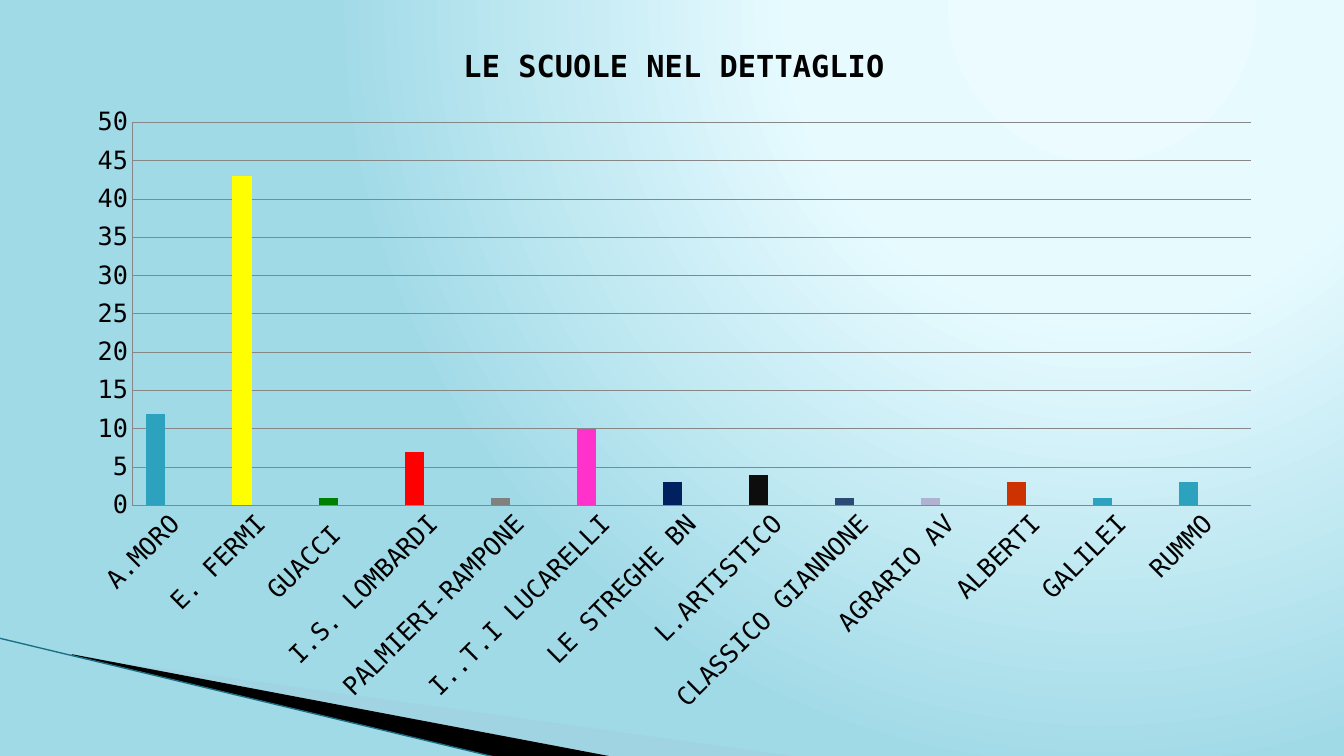
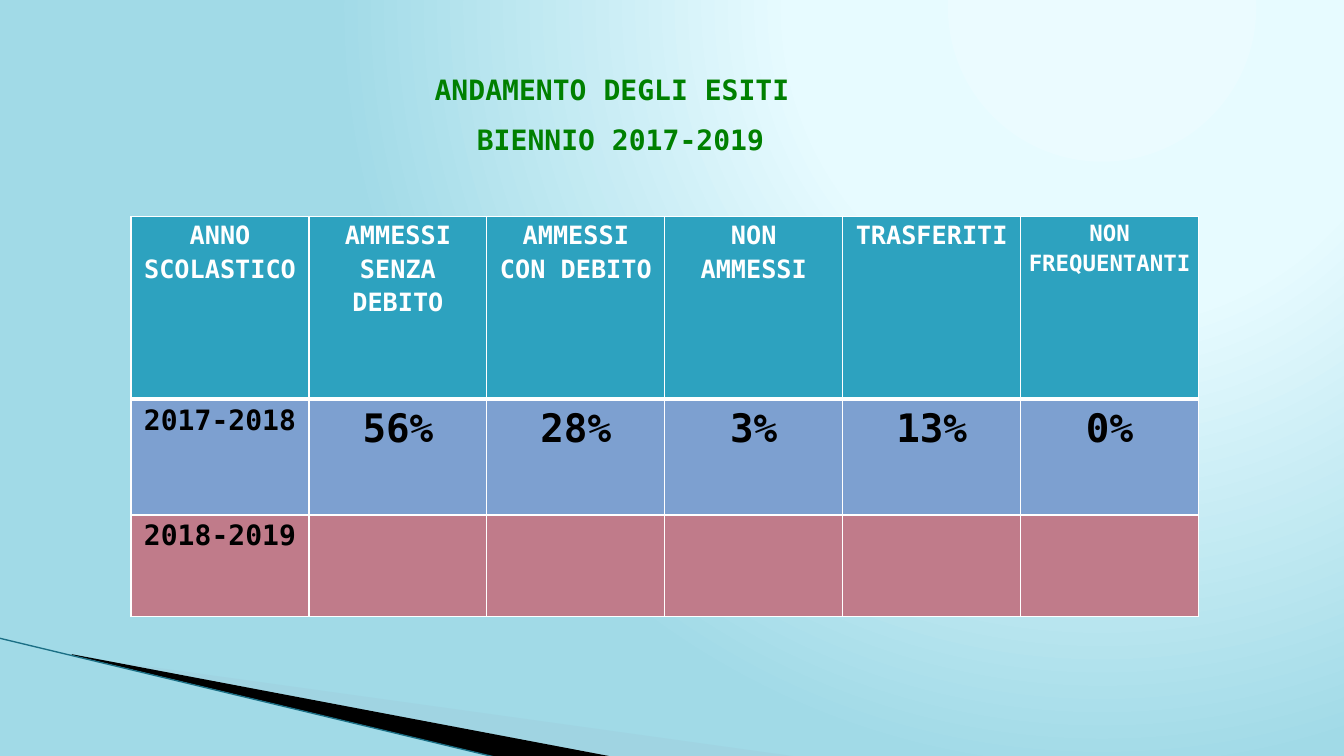
from dataclasses import dataclass

from lxml import etree
from pptx import Presentation
from pptx.chart.data import CategoryChartData
from pptx.dml.color import RGBColor
from pptx.enum.chart import XL_CHART_TYPE, XL_TICK_MARK
from pptx.enum.shapes import MSO_CONNECTOR
from pptx.enum.text import MSO_ANCHOR, PP_ALIGN
from pptx.oxml import parse_xml
from pptx.oxml.ns import nsdecls, qn
from pptx.util import Inches, Pt

CLUSTERED = XL_CHART_TYPE.COLUMN_CLUSTERED
NO_TICK = XL_TICK_MARK.NONE
STRAIGHT = MSO_CONNECTOR.STRAIGHT
CENTER = PP_ALIGN.CENTER
TOP = MSO_ANCHOR.TOP


@dataclass(frozen=True)
class Theme:
    """Colours, font and type sizes shared by the slides."""
    font: str = "DejaVu Sans Mono"
    glow: tuple = ((0, "EBFBFF"), (40, "E7FBFF"), (100, "A1DAE7"))
    black: str = "000000"
    white: str = "FFFFFF"
    green: str = "008000"
    teal: str = "2DA2BF"
    red: str = "DA1F28"
    orange: str = "EB641B"
    blue_row: str = "7DA0D0"
    rose_row: str = "C07B8A"
    pale_wedge: str = "A0CBDC"
    edge: str = "1B6F85"
    grid: str = "878787"
    small: float = 16
    body: float = 18
    heading: float = 20
    chart_title: float = 21.6
    figure: float = 28


THEME = Theme()


@dataclass(frozen=True)
class Box:
    """A region whose inner places are given in percent of its size."""
    left: int
    top: int
    width: int
    height: int

    def point(self, x, y):
        """Return the position at x and y percent."""
        return (round(self.left + self.width * x / 100),
                round(self.top + self.height * y / 100))

    def region(self, x, y, width, height):
        """Return the inner region at the given percentages."""
        return Box(*self.point(x, y), round(self.width * width / 100),
                   round(self.height * height / 100))

    def bounds(self):
        """Return left, top, width and height."""
        return self.left, self.top, self.width, self.height


SCHOOLS = (
    ("A.MORO", 12, None), ("E. FERMI", 43, "FFFF00"), ("GUACCI ", 1, "008000"),
    ("I.S. LOMBARDI", 7, "FF0000"), ("PALMIERI-RAMPONE", 1, "808080"),
    ("I..T.I LUCARELLI", 10, "FF33CC"), ("LE STREGHE BN", 3, "002060"),
    ("L.ARTISTICO", 4, "0D0D0D"), ("CLASSICO GIANNONE", 1, "2B4A76"),
    ("AGRARIO AV", 1, "AFB2D0"), ("ALBERTI", 3, "CC3300"),
    ("GALILEI", 1, None), ("RUMMO", 3, None),
)
RESULTS = (
    ("ANNO SCOLASTICO", "AMMESSI SENZA DEBITO", "AMMESSI CON DEBITO",
     "NON AMMESSI", "TRASFERITI", "NON FREQUENTANTI"),
    ("2017-2018", "56%", "28%", "3%", "13%", "0%"),
    ("2018-2019", "", "", "", "", ""),
)
ROW_SHARES = (45.6, 28.96, 25.44)
WEDGES = (
    (((5.48, 86.8), (59.48, 100.13), (45.6, 100.13), (5.48, 86.67)), THEME.pale_wedge, 40),
    (((5.33, 86.53), (45.68, 100.13), (37.2, 100.27), (5.4, 86.67)), THEME.black, 100),
)
EDGE = ((-0.08, 84.4), (37.13, 100.27))


def rgb(code):
    """Turn a hex code into a colour."""
    return RGBColor.from_string(code)


def paint(fill, code):
    """Give a solid fill its colour."""
    fill.solid()
    fill.fore_color.rgb = rgb(code)


def style_font(font, size, code, bold=False):
    """Apply the theme font with a size and colour."""
    font.name = THEME.font
    font.size = Pt(size)
    font.bold = bold
    font.color.rgb = rgb(code)


def set_background(master):
    """Give the master its radial glow."""
    master.background.fill.solid()
    solid = master.element.find(f".//{qn('p:bgPr')}/{qn('a:solidFill')}")
    stops = "".join(f'<a:gs pos="{share * 1000}"><a:srgbClr val="{code}"/></a:gs>'
                    for share, code in THEME.glow)
    glow = parse_xml(
        f'<a:gradFill {nsdecls("a")} rotWithShape="1"><a:gsLst>{stops}</a:gsLst>'
        '<a:path path="circle"><a:fillToRect l="65000" t="0" r="0" b="98000"/>'
        '</a:path></a:gradFill>')
    solid.getparent().replace(solid, glow)


def add_corner(slide, page):
    """Draw the wedges and edge in the lower left corner."""
    for corners, code, opacity in WEDGES:
        start, *others = (page.point(*corner) for corner in corners)
        outline = slide.shapes.build_freeform(*start)
        outline.add_line_segments(others)
        wedge = outline.convert_to_shape()
        wedge.shadow.inherit = False
        wedge.line.fill.background()
        paint(wedge.fill, code)
        if opacity < 100:
            tint = wedge.element.spPr.find(f"{qn('a:solidFill')}/{qn('a:srgbClr')}")
            etree.SubElement(tint, qn("a:alpha"), val=str(opacity * 1000))
    start, end = (page.point(*tip) for tip in EDGE)
    edge = slide.shapes.add_connector(STRAIGHT, *start, *end)
    edge.line.color.rgb = rgb(THEME.edge)
    edge.line.width = Pt(0.95)
    etree.SubElement(edge.element.spPr, qn("a:effectLst"))


def add_school_chart(slide, box):
    """Chart the schools, each with its own colour."""
    names, counts, colours = zip(*SCHOOLS)
    data = CategoryChartData()
    data.categories = names
    empty = (None,) * len(names)
    for number, values in enumerate((counts, empty, empty), 1):
        data.add_series(f"Series {number}", values)
    chart = slide.shapes.add_chart(CLUSTERED, *box.bounds(), data).chart
    style_font(chart.font, THEME.body, THEME.black)
    chart.has_legend = False
    chart.has_title = True
    heading = chart.chart_title.text_frame.paragraphs[0]
    heading.text = "LE SCUOLE NEL DETTAGLIO"
    style_font(heading.font, THEME.chart_title, THEME.black, True)
    chart.chart_title.include_in_layout = False

    bars = chart.plots[0]
    bars.gap_width = 150
    bars.overlap = 0
    bars.vary_by_categories = False
    for series, code in zip(bars.series, (THEME.teal, THEME.red, THEME.orange)):
        paint(series.format.fill, code)
        series.invert_if_negative = False
    for index, code in enumerate(colours):
        if code:
            paint(bars.series[0].points[index].format.fill, code)

    schools, scale = chart.category_axis, chart.value_axis
    scale.minimum_scale, scale.maximum_scale, scale.major_unit = 0, 50, 5
    scale.has_major_gridlines = True
    for axis in (schools, scale):
        axis.major_tick_mark = axis.minor_tick_mark = NO_TICK
        style_font(axis.tick_labels.font, THEME.body, THEME.black)
    for rule in (schools, scale, scale.major_gridlines):
        rule.format.line.color.rgb = rgb(THEME.grid)
        rule.format.line.width = Pt(0.75)
    schools._element.find(f"{qn('c:txPr')}/{qn('a:bodyPr')}").set("rot", "-2700000")


def add_heading(slide, box):
    """Write the two heading lines."""
    frame = slide.shapes.add_textbox(*box.bounds()).text_frame
    frame.word_wrap = True
    frame.text = "ANDAMENTO DEGLI ESITI \nBIENNIO 2017-2019"
    for line in frame.paragraphs:
        line.alignment = CENTER
        line.line_spacing = 1.5
        style_font(line.font, THEME.heading, THEME.green, True)


def set_borders(cell, top, bottom):
    """Draw white cell borders with the given top and bottom widths."""
    widths = (("lnL", 1), ("lnR", 1), ("lnT", top), ("lnB", bottom))
    for place, (side, width) in enumerate(widths):
        border = parse_xml(
            f'<a:{side} {nsdecls("a")} w="{Pt(width)}"><a:solidFill>'
            f'<a:srgbClr val="{THEME.white}"/></a:solidFill></a:{side}>')
        cell._tc.get_or_add_tcPr().insert(place, border)


def text_size(row, column):
    """Choose the type size of a table cell."""
    if row == 0:
        return THEME.small if column == 5 else THEME.body
    return THEME.heading if column == 0 else THEME.figure


def add_results(slide, box):
    """Fill the table of results by school year."""
    rows, columns = len(RESULTS), len(RESULTS[0])
    table = slide.shapes.add_table(rows, columns, *box.bounds()).table
    table.first_row = table.horz_banding = False
    for column in table.columns:
        column.width = box.width // columns
    for row, share in zip(table.rows, ROW_SHARES):
        row.height = round(box.height * share / 100)
    fills = (THEME.teal, THEME.blue_row, THEME.rose_row)
    for r, texts in enumerate(RESULTS):
        for c, text in enumerate(texts):
            cell = table.cell(r, c)
            paint(cell.fill, fills[r])
            set_borders(cell, 3 if r == 1 else 1, 3 if r == 0 else 1)
            cell.margin_left = cell.margin_right = Inches(0.07)
            cell.margin_top = cell.margin_bottom = 0
            cell.vertical_anchor = TOP
            if text:
                cell.text = text
                entry = cell.text_frame.paragraphs[0]
                entry.alignment = CENTER
                entry.line_spacing = 1.15
                ink = THEME.black if r else THEME.white
                style_font(entry.font, text_size(r, c), ink, True)


def schools_slide(slide, page):
    """Compose the slide with the schools in detail."""
    add_school_chart(slide, page.region(5.48, 2.67, 89.4, 93.47))


def results_slide(slide, page):
    """Compose the slide with the results of two years."""
    add_results(slide, page.region(9.75, 28.67, 79.43, 52.93))
    add_heading(slide, page.region(13.95, 6.67, 64.43, 14.8))


def main():
    """Build and save the presentation."""
    deck = Presentation()
    deck.slide_width, deck.slide_height = Inches(13.33), Inches(7.5)
    page = Box(0, 0, deck.slide_width, deck.slide_height)
    set_background(deck.slide_master)
    for compose in (schools_slide, results_slide):
        slide = deck.slides.add_slide(deck.slide_layouts[6])
        add_corner(slide, page)
        compose(slide, page)
    deck.save("out.pptx")


if __name__ == "__main__":
    main()
